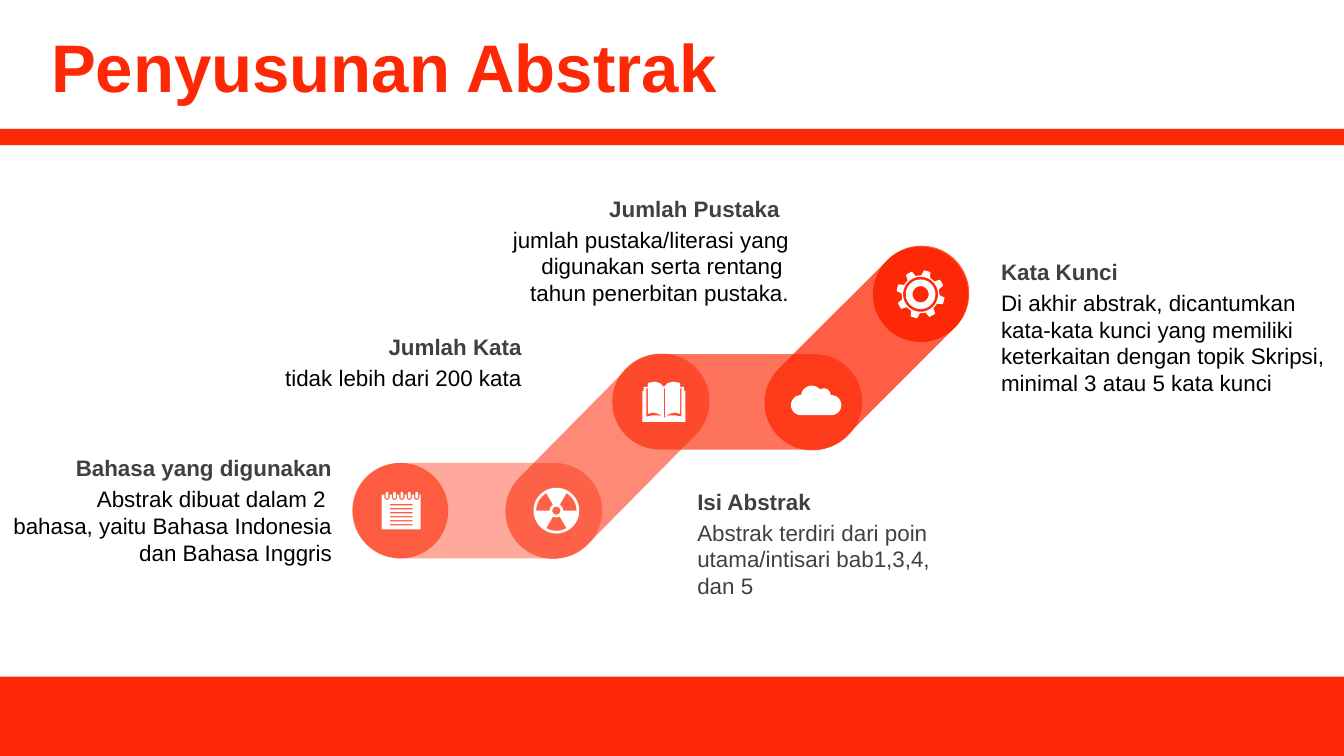
from dataclasses import dataclass
from math import atan2, cos, degrees, radians, sin

from lxml.etree import SubElement
from pptx import Presentation
from pptx.dml.color import RGBColor
from pptx.enum.shapes import MSO_SHAPE
from pptx.enum.text import MSO_ANCHOR, MSO_AUTO_SIZE, PP_ALIGN
from pptx.oxml.ns import qn
from pptx.util import Inches, Pt

Point = tuple[float, float]
Contour = list[Point]

COLORS = {"red": "FD2906", "white": "FFFFFF", "black": "000000", "gray": "404040"}
FONT = "Arial"
SLIDE_WIDTH = 10
SLIDE_HEIGHT = SLIDE_WIDTH * 9 / 16
FOOTER_HEIGHT = 0.59
BAND_WIDTH, BAND_LENGTH = 0.71, 1.86
CAPTION_DROP = 0.23  # from heading top to description top


@dataclass
class Step:
    heading: str
    lines: list[str]
    left: float
    top: float
    width: float
    height: float
    heading_left: float
    heading_width: float = 2.21
    align: PP_ALIGN = PP_ALIGN.RIGHT
    color: str = "black"


JOINTS: list[Point] = [(2.98, 3.8), (4.12, 3.8), (4.92, 2.99), (6.05, 2.99), (6.85, 2.19)]
BAND_OPACITY = [40, 55, 65, 75]

STEPS = [
    Step("Bahasa yang digunakan",
         ["Abstrak dibuat dalam 2 ", "bahasa, yaitu Bahasa Indonesia dan Bahasa Inggris"],
         0, 3.33, 2.57, 0.71, heading_left=0.36),
    Step("Jumlah Kata", ["tidak lebih dari 200 kata"],
         1.77, 2.43, 2.21, 0.3, heading_left=1.77),
    Step("Jumlah Pustaka",
         ["jumlah pustaka/literasi yang digunakan serta rentang ", "tahun penerbitan pustaka."],
         3.69, 1.4, 2.28, 0.71, heading_left=3.69),
    Step("Isi Abstrak", ["Abstrak terdiri dari poin utama/intisari bab1,3,4, dan 5"],
         5.09, 3.58, 2.07, 0.71, heading_left=5.09, heading_width=2.07,
         align=PP_ALIGN.LEFT, color="gray"),
    Step("Kata Kunci",
         ["Di akhir abstrak, dicantumkan", "kata-kata kunci yang memiliki",
          "keterkaitan dengan topik Skripsi, minimal 3 atau 5 kata kunci"],
         7.35, 1.87, 2.65, 0.91, heading_left=7.35, align=PP_ALIGN.LEFT),
]


def rgb(name: str) -> RGBColor:
    return RGBColor.from_string(COLORS[name])


def paint(shape, color: str, opacity: int = 100) -> None:
    shape.shadow.inherit = False
    shape.line.fill.background()
    shape.fill.solid()
    shape.fill.fore_color.rgb = rgb(color)
    if opacity < 100:
        tint = shape.element.spPr.find(".//" + qn("a:srgbClr"))
        SubElement(tint, qn("a:alpha")).set("val", str(opacity * 1000))


def add_preset(slide, preset, left, top, width, height, opacity=100, rotation=0.0):
    shape = slide.shapes.add_shape(
        preset, Inches(left), Inches(top), Inches(width), Inches(height))
    shape.rotation = rotation
    paint(shape, "red", opacity)
    return shape


def add_text(slide, lines: list[str], left, top, width, height,
             align: PP_ALIGN, color: str, bold: bool = False) -> None:
    frame = slide.shapes.add_textbox(
        Inches(left), Inches(top), Inches(width), Inches(height)).text_frame
    frame.word_wrap = True
    frame.auto_size = MSO_AUTO_SIZE.SHAPE_TO_FIT_TEXT
    frame.text = "\n".join(lines)
    for paragraph in frame.paragraphs:
        paragraph.alignment = align
        style_runs(paragraph, 12, color, bold)


def style_runs(paragraph, size: int, color: str, bold: bool) -> None:
    for run in paragraph.runs:
        run.font.name, run.font.size, run.font.bold = FONT, Pt(size), bold
        run.font.color.rgb = rgb(color)


# Icon outlines: nested contours become holes
def arc(center: Point, radius: float, start: float, end: float, count: int = 12) -> Contour:
    angles = [radians(start + (end - start) * i / count) for i in range(count + 1)]
    return [(center[0] + radius * cos(a), center[1] + radius * sin(a)) for a in angles]


def circle(center: Point, radius: float) -> Contour:
    return arc(center, radius, 0, 360, 48)


def box(left: float, top: float, right: float, bottom: float) -> Contour:
    return [(left, top), (right, top), (right, bottom), (left, bottom)]


def notepad() -> list[Contour]:
    contours = [box(2.84, 3.68, 3.13, 3.94)]
    for i in range(6):
        top = 3.75 + 0.03 * i
        contours.append(box(2.9, top, 3.07, top + 0.01))
    for i in range(5):
        x = 2.88 + 0.055 * i
        contours.append([(x - 0.02, 3.68), (x + 0.02, 3.68)] + arc((x, 3.7), 0.02, 0, 180))
        contours.append(arc((x, 3.67), 0.01, 180, 360) + arc((x, 3.7), 0.01, 0, 180))
    return contours


def radiation(center: Point) -> list[Contour]:
    blades = [arc(center, 0.15, a, a + 60) + arc(center, 0.05, a + 60, a)
              for a in (60, 180, 300)]
    return [circle(center, 0.17), circle(center, 0.03), *blades]


def book(spine: float) -> list[Contour]:
    def mirror(half: Contour) -> Contour:
        return [(2 * spine - x, y) for x, y in half]

    cover = [(spine, 3.14), (4.78, 3.14), (4.78, 2.91), (4.79, 2.91), (4.79, 2.88),
             (4.82, 2.88), (4.82, 2.85), (4.87, 2.84), (4.91, 2.85), (spine, 2.88)]
    page_edge = [(spine, 3.11), (4.9, 3.08), (4.86, 3.07), (4.82, 3.08), (4.82, 2.89),
                 (4.81, 2.89), (4.81, 3.1), (4.86, 3.09), (4.9, 3.09)]
    fold = box(spine, 2.89, spine + 0.01, 3.11)
    return [cover + mirror(cover)[::-1], page_edge, mirror(page_edge), fold]


def cloud() -> list[Contour]:
    return [arc((5.96, 3.015), 0.075, 90, 270) + arc((6.04, 2.95), 0.08, 180, 322)
            + arc((6.13, 2.94), 0.05, 240, 360) + arc((6.185, 3.015), 0.075, 270, 450)]


def gear(center: Point) -> list[Contour]:
    outline: Contour = []
    for tooth in range(8):
        middle = 16 + 45 * tooth
        outline += arc(center, 0.14, middle - 31, middle - 14, 4)
        outline += arc(center, 0.18, middle - 8, middle + 8, 2)
        outline += arc(center, 0.14, middle + 14, middle + 14, 1)
    return [outline] + [circle(center, radius) for radius in (0.13, 0.11, 0.06)]


def add_icon(slide, contours: list[Contour]) -> None:
    scaled = [[(Inches(x), Inches(y)) for x, y in contour] for contour in contours]
    builder = slide.shapes.build_freeform(*scaled[0][0])
    for i, contour in enumerate(scaled):
        if i:
            builder.move_to(*contour[0])
        builder.add_line_segments(contour[1:], close=True)
    paint(builder.convert_to_shape(), "white")


def main() -> None:
    deck = Presentation()
    deck.slide_width, deck.slide_height = Inches(SLIDE_WIDTH), Inches(SLIDE_HEIGHT)
    slide = deck.slides.add_slide(deck.slide_layouts[5])

    # Footer and header bars
    add_preset(slide, MSO_SHAPE.RECTANGLE, 0, SLIDE_HEIGHT - FOOTER_HEIGHT,
               SLIDE_WIDTH, FOOTER_HEIGHT)
    add_preset(slide, MSO_SHAPE.RECTANGLE, 0, 0.96, SLIDE_WIDTH, 0.12)

    # Title
    title = slide.shapes.title
    title.left, title.top = Inches(0.28), Inches(0)
    title.width, title.height = Inches(9.72), Inches(0.97)
    title.text_frame.text = "Penyusunan Abstrak"
    title.text_frame.vertical_anchor = MSO_ANCHOR.MIDDLE
    heading = title.text_frame.paragraphs[0]
    heading.alignment = PP_ALIGN.LEFT
    style_runs(heading, 36, "red", True)

    # Bands linking neighbouring joints
    for (x1, y1), (x2, y2), opacity in zip(JOINTS, JOINTS[1:], BAND_OPACITY):
        band = add_preset(
            slide, MSO_SHAPE.ROUNDED_RECTANGLE,
            (x1 + x2 - BAND_WIDTH) / 2, (y1 + y2 - BAND_LENGTH) / 2,
            BAND_WIDTH, BAND_LENGTH, opacity, 90 + degrees(atan2(y2 - y1, x2 - x1)))
        band.adjustments[0] = 0.5

    # End discs
    for (x, y), opacity in ((JOINTS[0], 60), (JOINTS[-1], 100)):
        add_preset(slide, MSO_SHAPE.OVAL, x - BAND_WIDTH / 2, y - BAND_WIDTH / 2,
                   BAND_WIDTH, BAND_WIDTH, opacity)

    # Icons
    for contours in (notepad(), radiation((4.14, 3.8)), book(4.94), cloud(), gear(JOINTS[-1])):
        add_icon(slide, contours)

    # Captions
    for step in STEPS:
        add_text(slide, step.lines, step.left, step.top + CAPTION_DROP,
                 step.width, step.height, step.align, step.color)
        add_text(slide, [step.heading], step.heading_left, step.top,
                 step.heading_width, 0.3, step.align, "gray", bold=True)

    deck.save("out.pptx")


if __name__ == "__main__":
    main()
